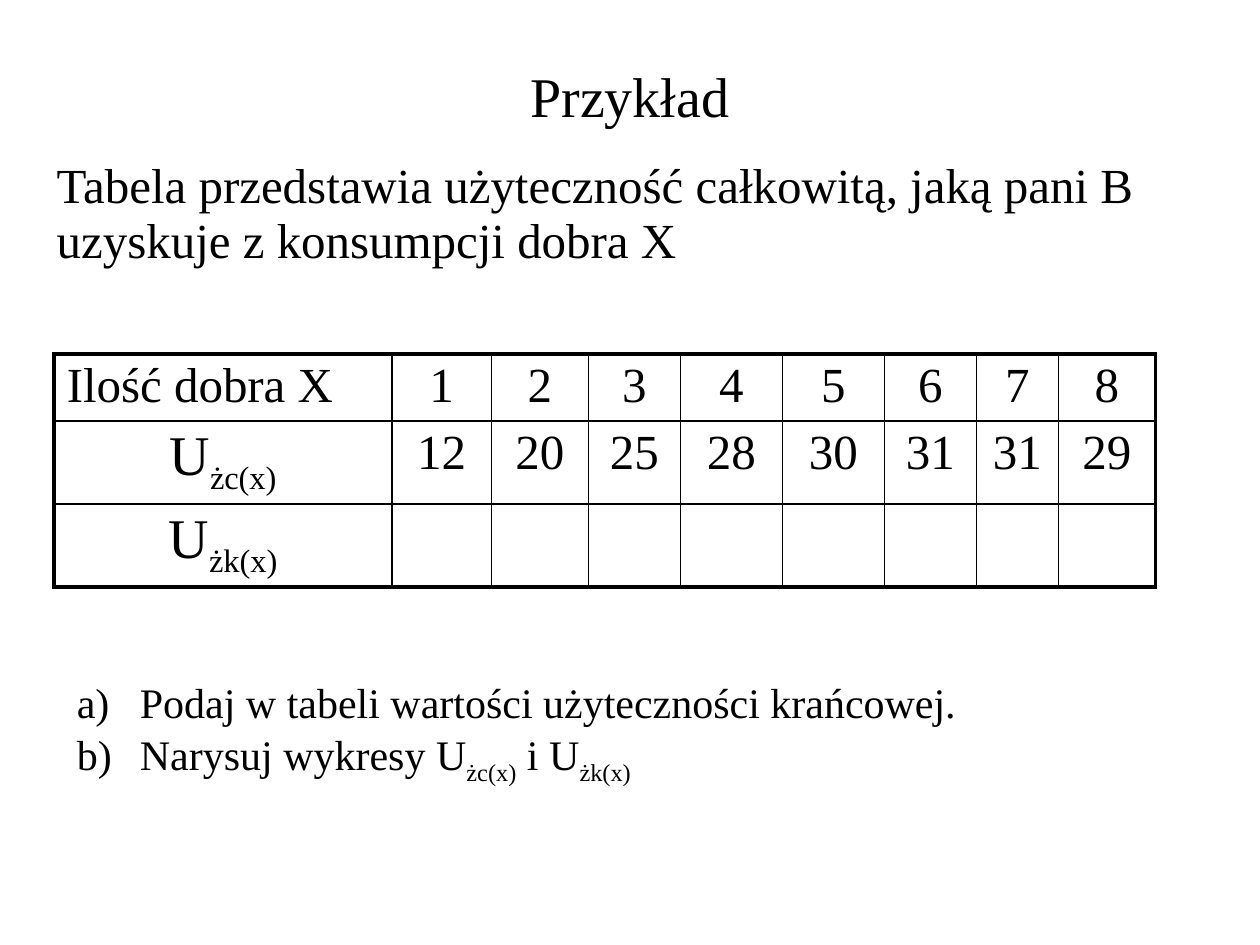
from lxml import etree
from pptx import Presentation
from pptx import util as u
from pptx.dml.color import RGBColor
from pptx.enum import text
from pptx.oxml.ns import qn

BLACK = RGBColor(0x00, 0x00, 0x00)
FONT = "Times New Roman"
THIN, THICK = 0.96, 2.21
CENTER = text.PP_ALIGN.CENTER

QUANTITIES = ["1", "2", "3", "4", "5", "6", "7", "8"]
TOTAL_UTILITY = ["12", "20", "25", "28", "30", "31", "31", "29"]
TOTAL = [("U", False), ("żc(x)", True)]
MARGINAL = [("U", False), ("żk(x)", True)]
COL_WIDTHS = [2.68, 0.79, 0.77, 0.73, 0.81, 0.81, 0.73, 0.65, 0.77]
ROW_HEIGHTS = [0.53, 0.66, 0.66]


def add_runs(p, runs, size):
    """Add (wording, is_subscript) runs to a paragraph."""
    for wording, subscript in runs:
        r = p.add_run()
        r.text = wording
        r.font.size = u.Pt(size)
        r.font.name = FONT
        r.font.color.rgb = BLACK
        if subscript:
            r._r.get_or_add_rPr().set("baseline", "-25000")


def place(sp, left, top, width, height, anchor):
    sp.left, sp.top = u.Inches(left), u.Inches(top)
    sp.width, sp.height = u.Inches(width), u.Inches(height)
    tf = sp.text_frame
    tf.word_wrap = True
    tf.auto_size = text.MSO_AUTO_SIZE.NONE
    tf.vertical_anchor = anchor
    return tf


def fill_list(tf, lines, size, indent, spacing=1.0, numbering=None):
    """Write hanging paragraphs, numbered when a scheme is given."""
    for i, runs in enumerate(lines):
        p = tf.add_paragraph() if i else tf.paragraphs[0]
        p.line_spacing = spacing
        p.space_before = u.Pt(1)
        pPr = p._p.get_or_add_pPr()
        pPr.set("marL", str(u.Inches(indent)))
        pPr.set("indent", str(-u.Inches(indent)))
        if numbering:
            font = etree.SubElement(pPr, qn("a:buFont"))
            font.set("typeface", FONT)
            etree.SubElement(pPr, qn("a:buAutoNum")).set("type", numbering)
        else:
            etree.SubElement(pPr, qn("a:buNone"))
        add_runs(p, runs, size)


def set_borders(cell, widths):
    """Draw the left, right, top and bottom edges, in that order."""
    tcPr = cell._tc.get_or_add_tcPr()
    for i, (side, width) in enumerate(zip("LRTB", widths)):
        ln = etree.Element(qn(f"a:ln{side}"), w=str(u.Pt(width)))
        fill = etree.SubElement(ln, qn("a:solidFill"))
        etree.SubElement(fill, qn("a:srgbClr")).set("val", str(BLACK))
        tcPr.insert(i, ln)


def add_utility_table(s):
    rows = [
        [[("Ilość dobra X", False)]] + [[(q, False)] for q in QUANTITIES],
        [TOTAL] + [[(v, False)] for v in TOTAL_UTILITY],
        [MARGINAL] + [[] for _ in QUANTITIES],
    ]
    last_row, last_col = len(rows) - 1, len(COL_WIDTHS) - 1
    table = s.shapes.add_table(
        len(rows), len(COL_WIDTHS), u.Inches(0.43), u.Inches(2.81),
        u.Inches(sum(COL_WIDTHS)), u.Inches(sum(ROW_HEIGHTS))).table
    table.first_row = table.horz_banding = False
    for col, width in zip(table.columns, COL_WIDTHS):
        col.width = u.Inches(width)
    for row, height in zip(table.rows, ROW_HEIGHTS):
        row.height = u.Inches(height)

    for i, row in enumerate(rows):
        for j, runs in enumerate(row):
            cell = table.cell(i, j)
            cell.fill.background()
            cell.margin_top = cell.margin_bottom = u.Inches(0.04)
            p = cell.text_frame.paragraphs[0]
            if i or j:
                p.alignment = CENTER
            add_runs(p, runs, 32 if i and not j else 28)
            outer = (j == 0, j == last_col, i == 0, i == last_row)
            set_borders(cell, [THICK if edge else THIN for edge in outer])


def main():
    prs = Presentation()
    prs.slide_width, prs.slide_height = u.Inches(10), u.Inches(7.5)
    s = prs.slides.add_slide(prs.slide_layouts[3])
    title, intro, tasks = s.placeholders

    # Title
    tf = place(title, 0.75, 0.44, 8.5, 0.63, text.MSO_ANCHOR.MIDDLE)
    tf.paragraphs[0].alignment = CENTER
    add_runs(tf.paragraphs[0], [("Przykład", False)], 32)

    # Introduction
    tf = place(intro, 0.35, 1.23, 9.13, 1.02, text.MSO_ANCHOR.TOP)
    fill_list(tf, [
        [("Tabela przedstawia użyteczność całkowitą, jaką pani B", False)],
        [("uzyskuje z konsumpcji dobra X", False)],
    ], 28, 0.37, spacing=0.9)

    # Utility table
    add_utility_table(s)

    # Tasks
    tf = place(tasks, 0.51, 5.32, 7.72, 0.95, text.MSO_ANCHOR.TOP)
    fill_list(tf, [
        [("Podaj w tabeli wartości użyteczności krańcowej.", False)],
        [("Narysuj wykresy ", False), *TOTAL, (" i ", False), *MARGINAL],
    ], 24, 0.5, numbering="alphaLcParenR")

    prs.save("out.pptx")


if __name__ == "__main__":
    main()
